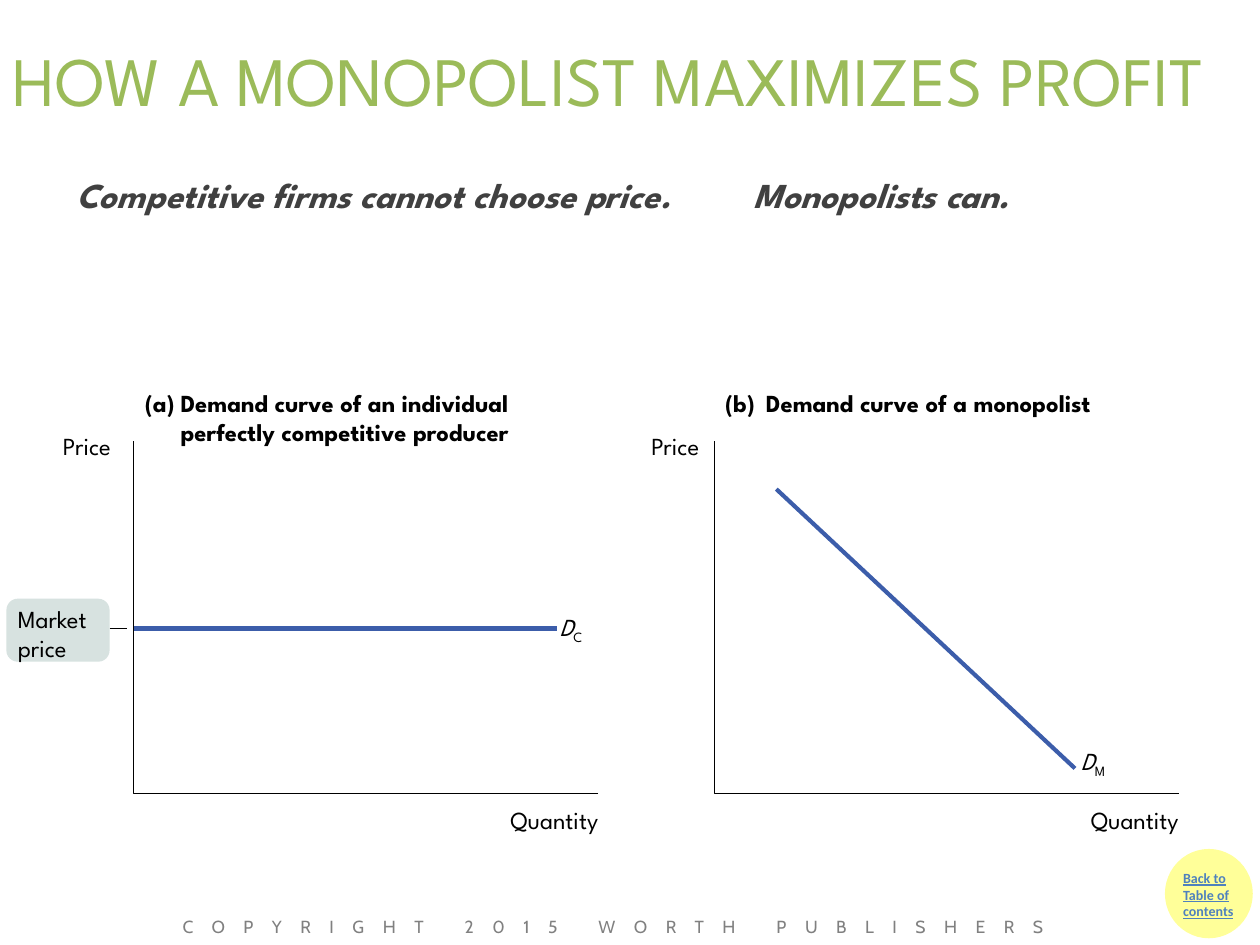
import pptx
import pptx.util
import pptx.dml.color
import pptx.enum.shapes
import pptx.enum.text
import pptx.oxml.ns
import lxml.etree

Cm = pptx.util.Cm
Pt = pptx.util.Pt
Kind = pptx.enum.shapes.MSO_SHAPE
FONT = "League Spartan"
BLACK = "000000"
BLUE = "3C5DAA"


def color(code):
    """Turn a hex string into a colour."""
    return pptx.dml.color.RGBColor.from_string(code)


def text(slide, words, left, top, width, height, size=14, font=FONT, ink=BLACK,
         bold=False, slant=False, under=False, sub="", gap=0, pad=0, wrap=True, middle=False):
    """Place a text box, with an optional subscript after its words."""
    box = slide.shapes.add_textbox(Cm(left), Cm(top), Cm(width), Cm(height))
    frame = box.text_frame
    frame.word_wrap = wrap
    frame.margin_left = frame.margin_right = Cm(pad)
    frame.margin_top = frame.margin_bottom = Cm(pad / 2)
    if middle:
        frame.vertical_anchor = pptx.enum.text.MSO_ANCHOR.MIDDLE
    for part in filter(None, (words, sub)):
        run = frame.paragraphs[0].add_run()
        run.text = part
        face = run.font
        face.name, face.size, face.bold = font, Pt(size), bold
        face.italic = slant and part == words
        face.underline = under
        face.color.rgb = color(ink)
        props = run._r.get_or_add_rPr()
        if gap:
            props.set("spc", str(int(gap * 100)))
        if part == sub:
            props.set("baseline", "-25000")
    return box


def line(slide, start, end, ink, weight):
    """Draw a straight line between two points."""
    rule = slide.shapes.add_connector(
        pptx.enum.shapes.MSO_CONNECTOR.STRAIGHT, *map(Cm, start + end))
    rule.line.color.rgb = color(ink)
    rule.line.width = Pt(weight)
    lxml.etree.SubElement(rule._element.spPr, pptx.oxml.ns.qn("a:effectLst"))


def solid(slide, kind, left, top, width, height, fill):
    """Place a filled shape without an outline."""
    shape = slide.shapes.add_shape(kind, Cm(left), Cm(top), Cm(width), Cm(height))
    shape.shadow.inherit = False
    shape.fill.solid()
    shape.fill.fore_color.rgb = color(fill)
    shape.line.fill.background()
    return shape


def axes(slide, left, top, width, height):
    """Draw the L-shaped axes of a graph."""
    path = slide.shapes.build_freeform(Cm(left + width), Cm(top + height))
    path.add_line_segments(
        [(Cm(left), Cm(top + height)), (Cm(left), Cm(top))], close=False)
    shape = path.convert_to_shape()
    shape.shadow.inherit = False
    shape.fill.background()
    shape.line.color.rgb = color(BLACK)
    shape.line.width = Pt(0.5)


def graph(slide, left, top, width, height, mark, title, indent, price, start, end, sub, tag):
    """Draw one demand graph with its heading and labels."""
    axes(slide, left, top, width, height)
    line(slide, (left + start[0], top + start[1]), (left + end[0], top + end[1]), BLUE, 2.38)
    text(slide, mark, left + 0.22, top - 1.07, 0.71, 0.6, bold=True, wrap=False)
    text(slide, title, left + indent, top - 1.07, 7.37, 1.2, bold=True)
    text(slide, "Price", left - price, top - 0.2, 1.47, 0.6)
    text(slide, "Quantity", left + width - 1.77, top + height + 0.23, 2.11, 0.6, wrap=False)
    text(slide, "D", left + tag[0], top + tag[1], 0.71, 0.6, slant=True, sub=sub, wrap=False)


def market(slide, left, top, width, height):
    """Draw the market price tag and its pointer."""
    tag = solid(slide, Kind.ROUNDED_RECTANGLE, left, top, width, height, "D7E2E0")
    tag.adjustments[0] = 0.18
    text(slide, "Market price", left + 0.23, top + 0.1, 1.7, 1.19)
    level = top + 0.6
    line(slide, (left + width, level), (left + width + 0.36, level), BLACK, 0.5)


def header(slide, left, top, width, height):
    """Write the title and the two statements below it."""
    text(slide, "HOW A MONOPOLIST MAXIMIZES PROFIT", left, top, width, height,
         size=39.6, ink="9BBB59", pad=0.25, middle=True)
    says = (("Competitive firms cannot choose price.", 1.29, 19.25), ("Monopolists can.", 14.94, 6.86))
    for words, shift, span in says:
        text(slide, words, left + shift, top + 3.38, span, 1.27, size=20,
             ink="404040", bold=True, slant=True, pad=0.25)


def footer(slide, left, top, width, height):
    """Place the contents button and the copyright line."""
    disc = solid(slide, Kind.OVAL, left + 23.52, top, 1.7, 1.73, "FFFF99")
    disc.line.color.rgb = color("FFFF99")
    disc.line.width = Pt(2)
    text(slide, "Back to Table of contents", left + 23.6, top + 0.25, 1.83, 1.7,
         size=8, font="Calibri", ink="4F81BD", bold=True, under=True, pad=0.25)
    text(slide, "COPYRIGHT 2015 WORTH PUBLISHERS", left + 3.43, top + height - 0.7,
         width - 5.69, 0.64, size=10, font="Cabin", ink="808080", gap=10.6, pad=0.25)


def main():
    """Build and save the slide."""
    deck = pptx.Presentation()
    deck.slide_width, deck.slide_height = Cm(25.4), Cm(19.05)
    slide = deck.slides.add_slide(deck.slide_layouts[6])
    header(slide, 0, 0, 25.4, 3.18)
    graph(slide, 2.7, 8.89, 9.36, 7.11, "(a)",
          "Demand curve of an individual perfectly competitive producer",
          0.94, 1.43, (0, 3.78), (8.53, 3.78), "C", (8.58, 3.45))
    graph(slide, 14.4, 8.89, 9.36, 7.11, "(b)", "Demand curve of a monopolist",
          1.04, 1.27, (1.25, 0.97), (7.27, 6.6), "M", (7.39, 6.15))
    market(slide, 0.13, 12.07, 2.08, 1.27)
    footer(slide, 0, 17.15, 25.4, 1.9)
    deck.save("out.pptx")


if __name__ == "__main__":
    main()
